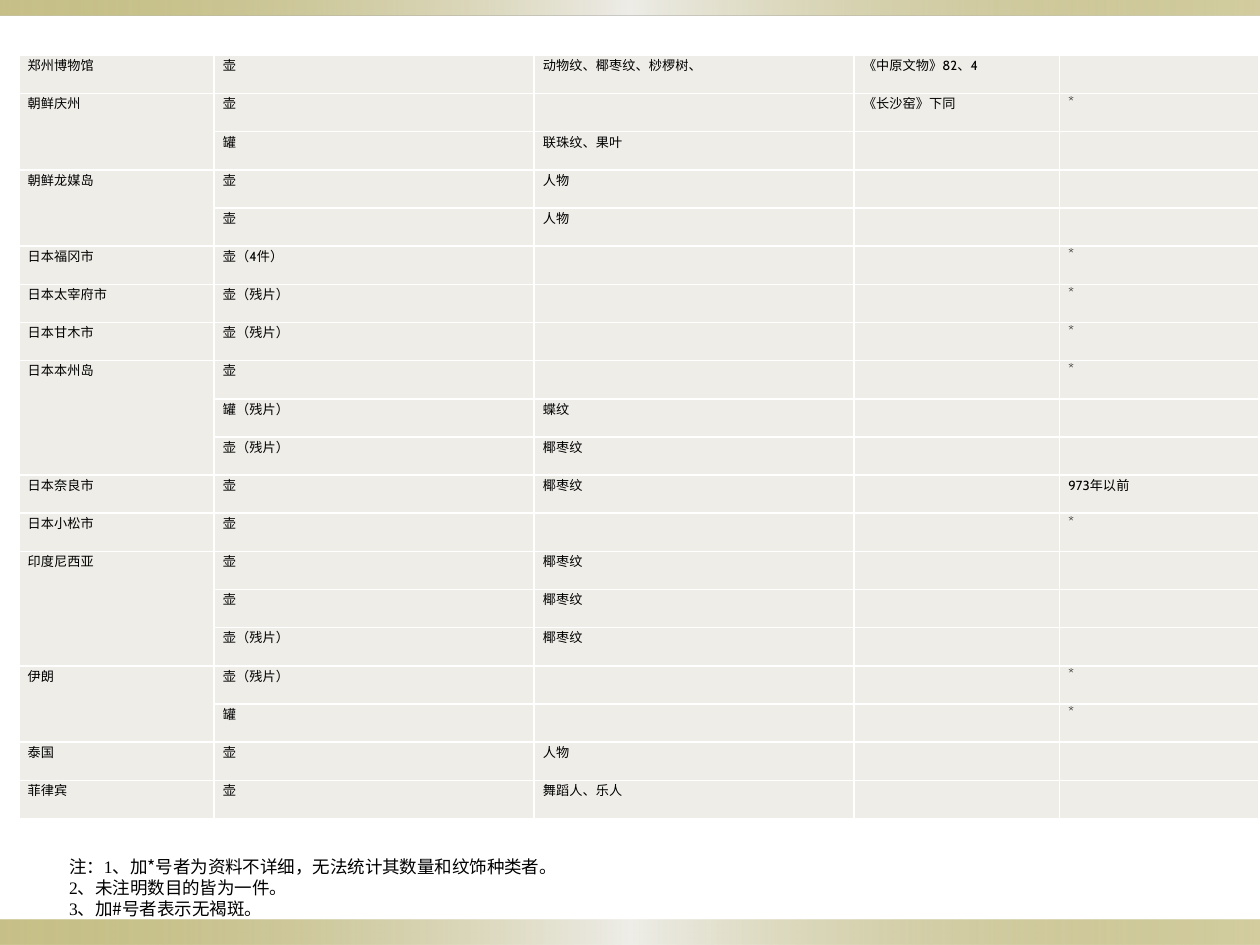
from lxml import etree
from pptx import Presentation
from pptx.dml.color import RGBColor
from pptx.enum.shapes import MSO_SHAPE
from pptx.enum.text import MSO_ANCHOR, PP_ALIGN
from pptx.oxml import parse_xml
from pptx.oxml.ns import nsdecls, qn
from pptx.util import Inches, Pt

RECTANGLE = MSO_SHAPE.RECTANGLE
JUSTIFY = PP_ALIGN.JUSTIFY
LEFT = PP_ALIGN.LEFT
MIDDLE = MSO_ANCHOR.MIDDLE

COLUMN_WIDTHS = [1.55, 2.54, 2.54, 1.63, 1.58]
ROW_HEIGHT = 0.303
FINDS = [
    ("郑州博物馆", [("壶", "动物纹、椰枣纹、桫椤树、", "《中原文物》82、4", "")]),
    ("朝鲜庆州", [("壶", "", "《长沙窑》下同", "*"), ("罐", "联珠纹、果叶", "", "")]),
    ("朝鲜龙媒岛", [("壶", "人物", "", ""), ("壶", "人物", "", "")]),
    ("日本福冈市", [("壶（4件）", "", "", "*")]),
    ("日本太宰府市", [("壶（残片）", "", "", "*")]),
    ("日本甘木市", [("壶（残片）", "", "", "*")]),
    ("日本本州岛", [("壶", "", "", "*"), ("罐（残片）", "蝶纹", "", ""),
               ("壶（残片）", "椰枣纹", "", "")]),
    ("日本奈良市", [("壶", "椰枣纹", "", "973年以前")]),
    ("日本小松市", [("壶", "", "", "*")]),
    ("印度尼西亚", [("壶", "椰枣纹", "", ""), ("壶", "椰枣纹", "", ""),
               ("壶（残片）", "椰枣纹", "", "")]),
    ("伊朗", [("壶（残片）", "", "", "*"), ("罐", "", "", "*")]),
    ("泰国", [("壶", "人物", "", "")]),
    ("菲律宾", [("壶", "舞蹈人、乐人", "", "")]),
]
NOTES = [
    ["注：1、加", "*", "号者为资料不详细，无法统计其数量和纹饰种类者。"],
    ["2、未注明数目的皆为一件。"],
    ["3、加", "#", "号者表示无褐斑。"],
]


def color(value):
    return RGBColor.from_string(value)


class SlideBuilder:
    """Hold the style and current slide, and draw each kind of element."""

    BAND = [(0, "918415", 50), (50, "EEEDE8", 100), (100, "918415", 40)]
    CELL_FILL = "EEEDE8"
    BORDER = "FFFFFF"
    TEXT = "000000"
    ASIAN_FONT = "Noto Sans CJK SC"
    CELL_FORMAT = {"margin_left": Inches(0.07), "margin_right": Inches(0.07),
                   "margin_top": 0, "margin_bottom": 0}

    def __init__(self, slide):
        self.slide = slide

    def band(self, top, height):
        shape = self.slide.shapes.add_shape(
            RECTANGLE, 0, Inches(top), Inches(10), Inches(height))
        shape.shadow.inherit = False
        shape.line.fill.background()
        stops = "".join(
            f'<a:gs pos="{position * 1000}"><a:srgbClr val="{value}">'
            f'<a:alpha val="{opacity * 1000}"/></a:srgbClr></a:gs>'
            for position, value, opacity in self.BAND)
        gradient = parse_xml(
            f'<a:gradFill {nsdecls("a")} rotWithShape="1"><a:gsLst>{stops}</a:gsLst>'
            '<a:lin ang="0" scaled="0"/></a:gradFill>')
        shape.fill.background()
        properties = shape.element.spPr
        properties.replace(properties.find(qn("a:noFill")), gradient)

    def run(self, paragraph, text, size, font):
        run = paragraph.add_run()
        run.text = text
        run.font.color.rgb = color(self.TEXT)
        for name, value in {"size": Pt(size), "name": font}.items():
            setattr(run.font, name, value)
        etree.SubElement(run.font._element, qn("a:ea"), typeface=self.ASIAN_FONT)

    def cell(self, cell, text):
        for name, value in self.CELL_FORMAT.items():
            setattr(cell, name, value)
        cell.fill.solid()
        cell.fill.fore_color.rgb = color(self.CELL_FILL)
        properties = cell._tc.get_or_add_tcPr()
        for index, side in enumerate(("lnL", "lnR", "lnT", "lnB")):
            properties.insert(index, parse_xml(
                f'<a:{side} {nsdecls("a")} w="{Pt(1)}"><a:solidFill>'
                f'<a:srgbClr val="{self.BORDER}"/></a:solidFill></a:{side}>'))
        paragraph = cell.text_frame.paragraphs[0]
        paragraph.alignment = JUSTIFY
        if text:
            self.run(paragraph, text, 7.5, "Cabin")
        else:
            etree.SubElement(paragraph._p, qn("a:endParaRPr"), sz="750")

    def table(self, left, top, groups):
        rows = [(place if index == 0 else "", *find)
                for place, finds in groups for index, find in enumerate(finds)]
        table = self.slide.shapes.add_table(
            len(rows), len(COLUMN_WIDTHS), Inches(left), Inches(top),
            Inches(sum(COLUMN_WIDTHS)), Inches(ROW_HEIGHT * len(rows))).table
        table.first_row = table.horz_banding = False
        for column, width in zip(table.columns, COLUMN_WIDTHS):
            column.width = Inches(width)
        for row_index, row in enumerate(rows):
            table.rows[row_index].height = Inches(ROW_HEIGHT)
            for column_index, text in enumerate(row):
                self.cell(table.cell(row_index, column_index), text)
        start = 0
        for _, finds in groups:
            end = start + len(finds)
            if len(finds) > 1:
                table.cell(start, 0).merge(table.cell(end - 1, 0))
            start = end

    def notes(self, left, top, width, height, lines):
        box = self.slide.shapes.add_textbox(
            Inches(left), Inches(top), Inches(width), Inches(height))
        frame = box.text_frame
        for name, value in {"word_wrap": True, "vertical_anchor": MIDDLE}.items():
            setattr(frame, name, value)
        for index, parts in enumerate(lines):
            paragraph = frame.add_paragraph() if index else frame.paragraphs[0]
            paragraph.alignment = LEFT
            paragraph._p.get_or_add_pPr().set("indent", str(Inches(0.3)))
            for part in parts:
                font = self.ASIAN_FONT if part in "*#" else "Times New Roman"
                self.run(paragraph, part, 10, font)


def main():
    presentation = Presentation()
    presentation.slide_width = Inches(10)
    presentation.slide_height = Inches(7.5)
    builder = SlideBuilder(
        presentation.slides.add_slide(presentation.slide_layouts[6]))
    builder.band(7.3, 0.2)
    builder.band(0, 0.12)
    builder.table(0.15, 0.44, FINDS)
    builder.notes(0.15, 6.74, 9.29, 0.61, NOTES)
    presentation.save("out.pptx")


if __name__ == "__main__":
    main()
